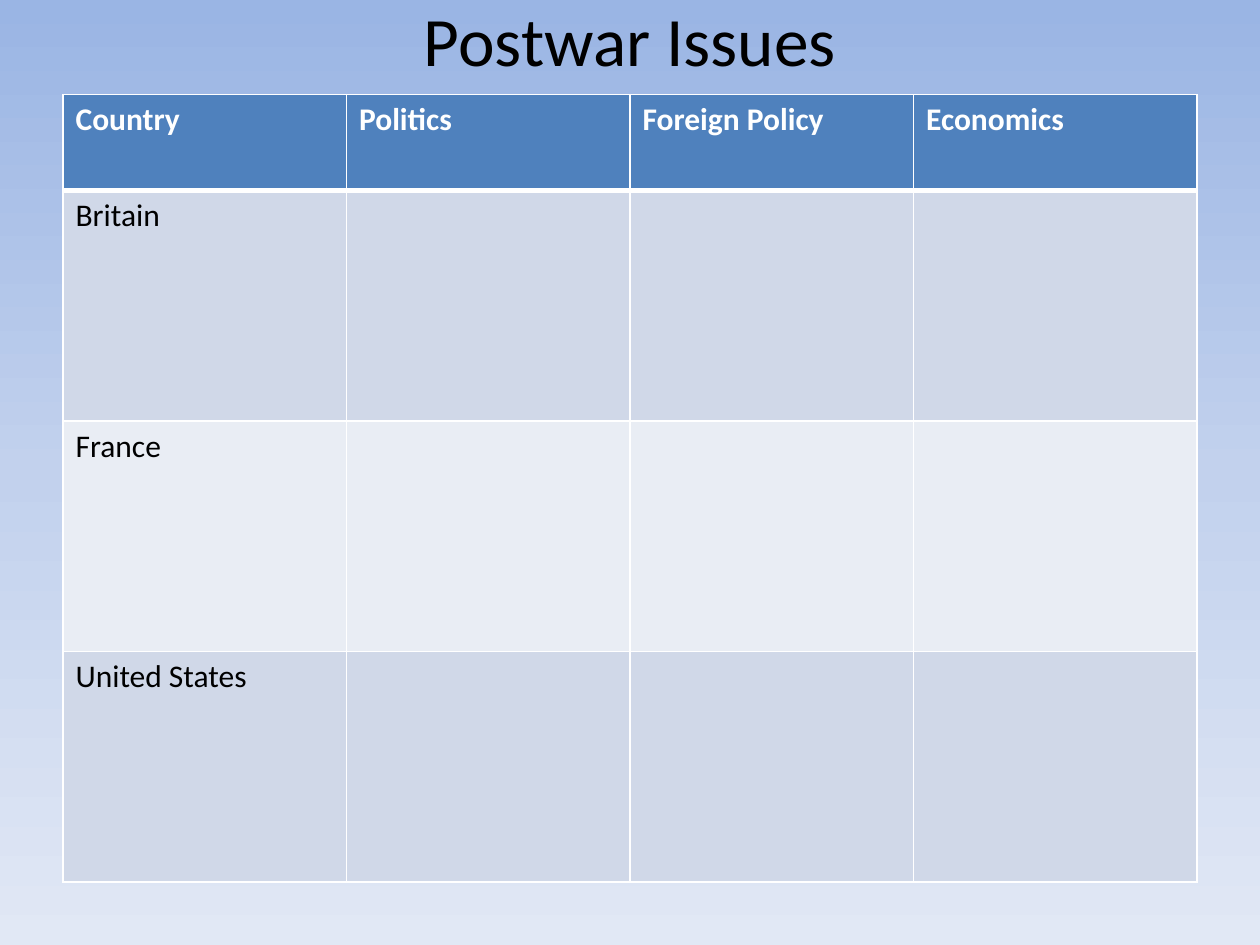
from copy import deepcopy

from pptx import Presentation
from pptx.dml.color import RGBColor
from pptx.enum.text import MSO_ANCHOR, PP_ALIGN
from pptx.oxml import parse_xml
from pptx.oxml.ns import nsdecls, qn
from pptx.util import Inches, Pt

MIDDLE = MSO_ANCHOR.MIDDLE
CENTER = PP_ALIGN.CENTER
COLORS = {
    "sky_top": "9AB5E4",
    "sky_middle": "C2D1ED",
    "sky_bottom": "E1E8F5",
    "header": "4F81BD",
    "odd_row": "D0D8E8",
    "even_row": "E9EDF4",
    "white": "FFFFFF",
    "black": "000000",
}
ISSUES = ["Country", "Politics", "Foreign Policy", "Economics"]
COUNTRIES = ["Britain", "France", "United States"]


class SlideBuilder:
    font_name = "Calibri"

    def __init__(self, slide):
        self.slide = slide

    def color(self, name):
        return RGBColor.from_string(COLORS[name])

    def background(self, *names):
        fill = self.slide.background.fill
        fill.gradient()
        fill.gradient_angle = 270
        stop_list = self.slide.element.find(".//" + qn("a:gsLst"))
        while len(stop_list) < len(names):
            stop_list.append(deepcopy(stop_list[0]))
        for index, (stop, name) in enumerate(zip(fill.gradient_stops, names)):
            stop.color.rgb = self.color(name)
            stop.position = index / (len(names) - 1)

    def style_text(self, paragraph, text, color, **formats):
        paragraph.text = text
        font = paragraph.font
        for key, value in {"name": self.font_name, **formats}.items():
            setattr(font, key, value)
        font.color.rgb = self.color(color)

    def title(self, text, left, top, width, height):
        frame = self.slide.shapes.add_textbox(
            Inches(left), Inches(top), Inches(width), Inches(height)
        ).text_frame
        frame.word_wrap = True
        frame.vertical_anchor = MIDDLE
        heading = frame.paragraphs[0]
        heading.alignment = CENTER
        self.style_text(heading, text, "black", size=Pt(39.6))

    def borders(self, cell, widths):
        properties = cell._tc.get_or_add_tcPr()
        for index, side in enumerate("LRTB"):
            properties.insert(index, parse_xml(
                f'<a:ln{side} {nsdecls("a")} w="{Pt(widths.get(side, 1))}">'
                f'<a:solidFill><a:srgbClr val="{COLORS["white"]}"/></a:solidFill>'
                f'</a:ln{side}>'
            ))

    def table(self, rows, left, top, width, heights):
        grid = self.slide.shapes.add_table(
            len(rows), len(rows[0]), Inches(left), Inches(top),
            Inches(width), Inches(sum(heights))
        ).table
        for row, height in zip(grid.rows, heights):
            row.height = Inches(height)
        for r, texts in enumerate(rows):
            header = r == 0
            fill = "header" if header else "odd_row" if r % 2 else "even_row"
            for c, text in enumerate(texts):
                cell = grid.cell(r, c)
                cell.fill.solid()
                cell.fill.fore_color.rgb = self.color(fill)
                self.borders(cell, {0: {"B": 3}, 1: {"T": 3}}.get(r, {}))
                self.style_text(cell.text_frame.paragraphs[0], text,
                                "white" if header else "black",
                                size=Pt(18), bold=header)


def main():
    presentation = Presentation()
    presentation.slide_width = Inches(10)
    presentation.slide_height = Inches(7.5)
    builder = SlideBuilder(
        presentation.slides.add_slide(presentation.slide_layouts[6]))
    builder.background("sky_top", "sky_middle", "sky_bottom")
    builder.title("Postwar Issues", 0.5, 0, 9, 0.62)
    blanks = [""] * (len(ISSUES) - 1)
    rows = [ISSUES] + [[country] + blanks for country in COUNTRIES]
    builder.table(rows, 0.5, 0.75, 9, [0.76] + [1.83] * len(COUNTRIES))
    presentation.save("out.pptx")


if __name__ == "__main__":
    main()
